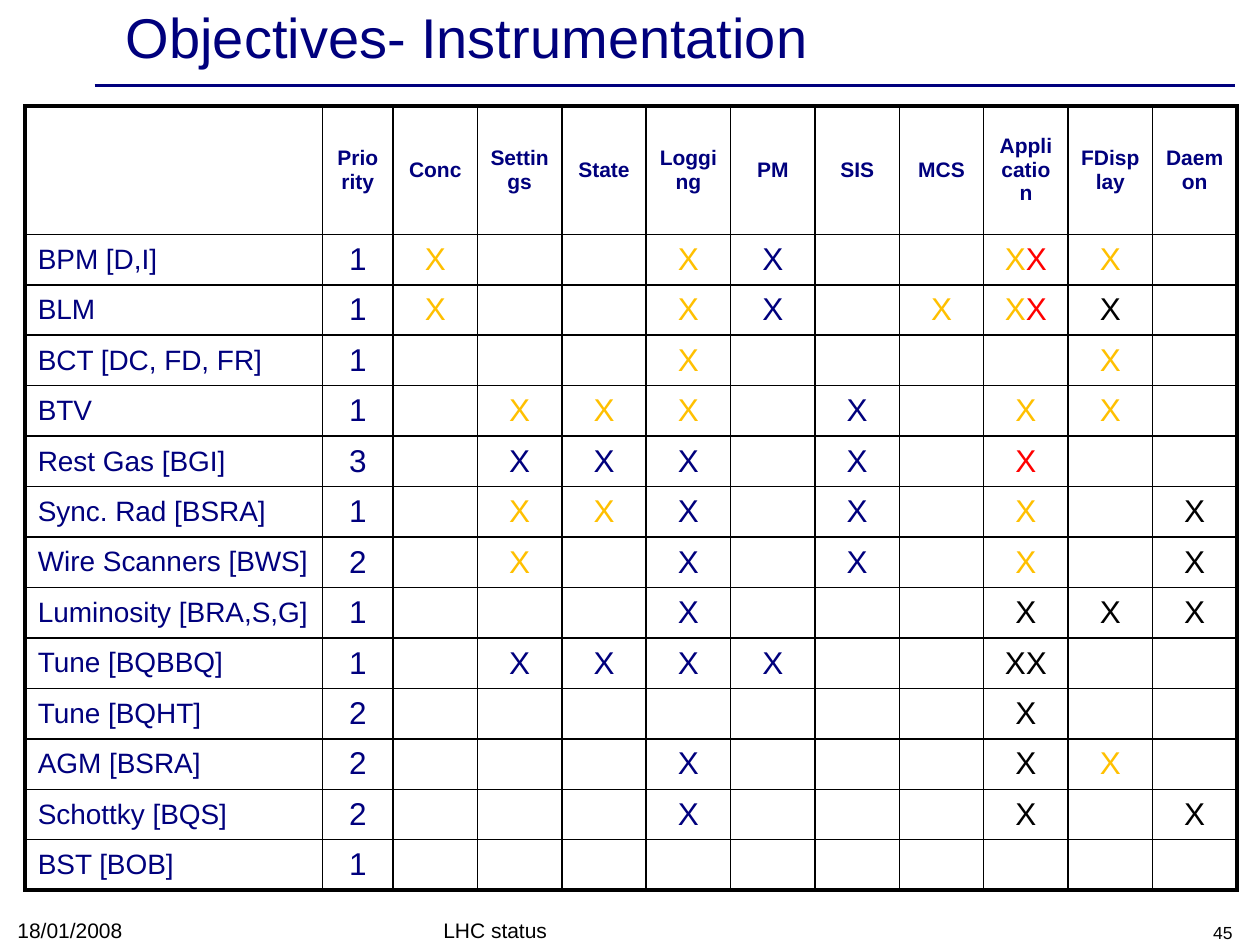
from itertools import groupby

from lxml import etree
from pptx import Presentation
from pptx import util as u
from pptx.dml.color import RGBColor
from pptx.enum import shapes, text
from pptx.oxml import ns

# Content
NAVY, BLACK, WHITE = "00007D", "000000", "FFFFFF"
TINTS = {"o": "FFC000", "r": "FF0000", "n": NAVY, "k": BLACK}
HEADS = ["", "Priority", "Conc", "Settings", "State", "Logging", "PM", "SIS",
         "MCS", "Application", "FDisplay", "Daemon"]
# Each mark is an X; its letter gives the colour, a dot leaves the cell empty
ROWS = [
    ("BPM [D,I]", "1", "o . . o n . . or o ."),
    ("BLM", "1", "o . . o n . o or k ."),
    ("BCT [DC, FD, FR]", "1", ". . . o . . . . o ."),
    ("BTV", "1", ". o o o . n . o o ."),
    ("Rest Gas [BGI]", "3", ". n n n . n . r . ."),
    ("Sync. Rad [BSRA]", "1", ". o o n . n . o . k"),
    ("Wire Scanners [BWS]", "2", ". o . n . n . o . k"),
    ("Luminosity [BRA,S,G]", "1", ". . . n . . . k k k"),
    ("Tune [BQBBQ]", "1", ". n n n n . . kk . ."),
    ("Tune [BQHT]", "2", ". . . . . . . k . ."),
    ("AGM [BSRA]", "2", ". . . n . . . k o ."),
    ("Schottky [BQS]", "2", ". . . n . . . k . k"),
    ("BST [BOB]", "1", ". . . . . . . . . ."),
]
WIDE = [2.36, 0.56] + [0.67] * 10
HIGH = [1.02] + [0.39] * 9 + [0.38] * 2 + [0.39] * 2
LEFT, MID, RIGHT = (text.PP_ALIGN.LEFT, text.PP_ALIGN.CENTER,
                    text.PP_ALIGN.RIGHT)
# Text, place, size, colour, alignment, anchor
BOXES = [
    ("Objectives- Instrumentation", (0.9, 0, 7.25, 0.58), 32, NAVY, LEFT,
     text.MSO_ANCHOR.MIDDLE),
    ("18/01/2008", (0.04, 7.24, 2.33, 0.29), 12, BLACK, LEFT,
     text.MSO_ANCHOR.BOTTOM),
    ("LHC status", (3.42, 7.25, 3.17, 0.28), 12, BLACK, LEFT,
     text.MSO_ANCHOR.BOTTOM),
    ("45", (7.55, 7.25, 2.33, 0.28), 10, BLACK, RIGHT,
     text.MSO_ANCHOR.BOTTOM),
]


def tint(code):
    return RGBColor.from_string(code)


def write(para, words, color, **form):
    run = para.add_run()
    run.text = words
    run.font.color.rgb = tint(color)
    for key, val in {"name": "Arial", "bold": False, **form}.items():
        setattr(run.font, key, val)


def edge(cell, widths):
    props = cell._tc.get_or_add_tcPr()
    for spot, (side, width) in enumerate(widths.items()):
        line = etree.Element(ns.qn("a:ln" + side), w=str(u.Pt(width)))
        fill = etree.SubElement(line, ns.qn("a:solidFill"))
        etree.SubElement(fill, ns.qn("a:srgbClr"), val=BLACK)
        props.insert(spot, line)


deck = Presentation()
deck.slide_width, deck.slide_height = u.Inches(10), u.Inches(7.5)
slide = deck.slides.add_slide(deck.slide_layouts[6])

# Rule under the title
rule = slide.shapes.add_connector(
    shapes.MSO_CONNECTOR.STRAIGHT,
    *map(u.Inches, (0.75, 0.68, 9.8, 0.68)))
rule.line.color.rgb = tint(NAVY)
rule.line.width = u.Pt(2)
etree.SubElement(rule._element.spPr, ns.qn("a:effectLst"))

# Title and footer
for words, place, size, color, align, anchor in BOXES:
    frame = slide.shapes.add_textbox(*map(u.Inches, place)).text_frame
    frame.word_wrap = True
    frame.vertical_anchor = anchor
    para = frame.paragraphs[0]
    para.alignment = align
    write(para, words, color, size=u.Pt(size))

# Table grid
table = slide.shapes.add_table(
    len(HIGH), len(WIDE), u.Inches(0.2), u.Inches(0.84),
    u.Inches(sum(WIDE)), u.Inches(sum(HIGH))).table
table.first_row = table.horz_banding = False
for col, width in zip(table.columns, WIDE):
    col.width = u.Inches(width)
for row, height in zip(table.rows, HIGH):
    row.height = u.Inches(height)

# Table cells
grid = [HEADS] + [[name, rank, *marks.split()] for name, rank, marks in ROWS]
for r, row in enumerate(grid):
    for c, item in enumerate(row):
        cell = table.cell(r, c)
        cell.vertical_anchor = text.MSO_ANCHOR.MIDDLE
        cell.fill.solid()
        cell.fill.fore_color.rgb = tint(WHITE)
        outer = {"L": c == 0, "R": c == len(WIDE) - 1,
                 "T": r == 0, "B": r == len(HIGH) - 1}
        edge(cell, {side: 2.25 if out else 1 for side, out in outer.items()})
        para = cell.text_frame.paragraphs[0]
        para.alignment = LEFT if c == 0 else MID
        if r == 0:
            if item:
                cell._tc.get_or_add_tcPr().set("vert", "eaVert")
                write(para, item, NAVY, size=u.Pt(12), bold=True)
        elif c < 2:
            write(para, item, NAVY, size=u.Pt(18 if c else 16))
        elif item != ".":
            for key, same in groupby(item):
                write(para, "X" * len(list(same)), TINTS[key], size=u.Pt(18))

deck.save("out.pptx")
